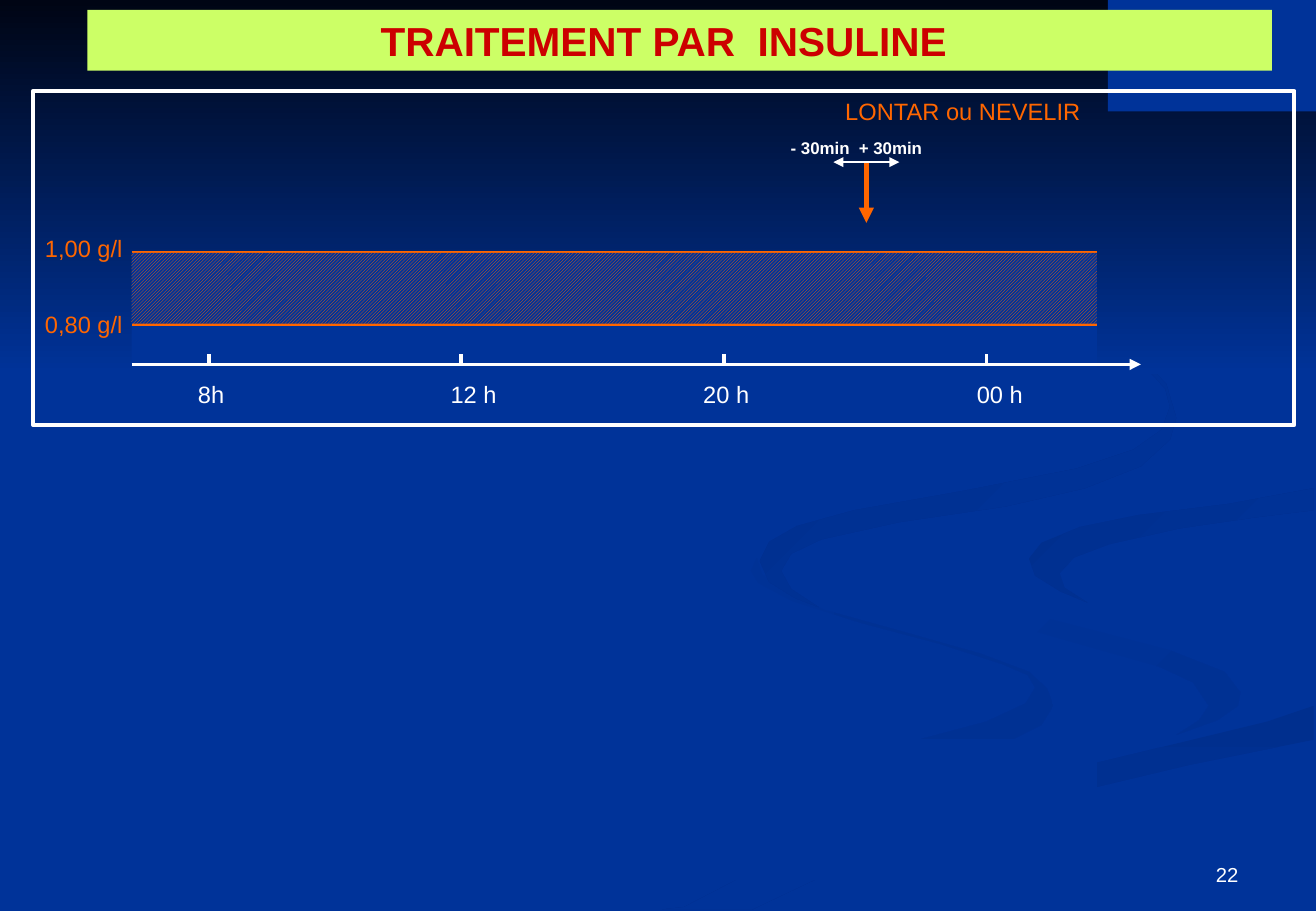
from lxml.etree import SubElement
from pptx import Presentation
from pptx.dml.color import RGBColor
from pptx.enum.dml import MSO_PATTERN
from pptx.enum.shapes import MSO_CONNECTOR, MSO_SHAPE
from pptx.enum.text import MSO_ANCHOR, PP_ALIGN
from pptx.oxml.ns import qn
from pptx.util import Cm, Pt

BLUE = RGBColor(0x00, 0x33, 0x99)
RIBBON_BLUE = RGBColor(0x00, 0x2F, 0x8E)
PALE_RIBBON_BLUE = RGBColor(0x00, 0x31, 0x93)
NIGHT = RGBColor(0x00, 0x05, 0x14)
LIME = RGBColor(0xCC, 0xFF, 0x66)
RED = RGBColor(0xCC, 0x00, 0x00)
ORANGE = RGBColor(0xFF, 0x66, 0x00)
WHITE = RGBColor(0xFF, 0xFF, 0xFF)

SLIDE_WIDTH, SLIDE_HEIGHT = 27.51, 19.05
CHART_LEFT, CHART_WIDTH = 2.75, 20.18
CHART_RIGHT = CHART_LEFT + CHART_WIDTH
TARGET_TOP, TARGET_BOTTOM = 5.29, 6.77
AXIS_Y, TICK_HEIGHT = 7.62, 0.21
DOSE_X, DOSE_Y = 18.11, 3.39

# Hour, tick position, left of its label
HOURS = (
    ("8h", 4.37, 3.89),
    ("12 h", 9.63, 9.17),
    ("20 h", 15.14, 14.45),
    ("00 h", 20.62, 20.17),
)

# First colour, last colour, clockwise angle, outline in centimetres
RIBBONS = (
    (BLUE, PALE_RIBBON_BLUE, 0, (
        (21.51, 14.05), (20.5, 13.67), (18.77, 13.18), (17.22, 12.75), (16.33, 12.32),
        (15.93, 12.01), (15.82, 11.66), (15.7, 11.94), (15.85, 12.19), (16.56, 12.57),
        (18.01, 13.03), (19.63, 13.46), (20.96, 13.89), (21.49, 14.12), (21.64, 14.38),
        (21.44, 14.71), (20.62, 15.09), (18.82, 15.57), (15.93, 16.23), (12.62, 17.12),
        (10.36, 17.96), (8.26, 19.02), (9.93, 19.02), (12.83, 17.78), (16.33, 16.66),
        (19.25, 15.95), (21.16, 15.47), (21.77, 15.16), (22.02, 14.76), (21.89, 14.4))),
    (BLUE, PALE_RIBBON_BLUE, 45, (
        (25.93, 14.48), (25.6, 14.05), (24.43, 13.59), (22.86, 13.18), (21.29, 12.78),
        (20.17, 12.27), (19.91, 11.79), (19.99, 12.17), (20.52, 12.7), (21.49, 13.16),
        (23.06, 13.61), (24.23, 13.94), (24.94, 14.27), (25.27, 14.76), (25.07, 15.06),
        (24.59, 15.37), (25.45, 15.06), (25.88, 14.76))),
    (RIBBON_BLUE, BLUE, 90, (
        (14.3, 18.97), (13.84, 19.02), (15.72, 19.02), (17.32, 18.26), (19.86, 17.32),
        (22.58, 16.54), (24.84, 16), (27.46, 15.47), (27.46, 14.76), (26.49, 15.09),
        (24.84, 15.49), (21.44, 16.31), (18.21, 17.3), (15.67, 18.26))),
    (RIBBON_BLUE, BLUE, 45, (
        (21.51, 11.68), (21.64, 12.04), (22.17, 12.37), (22.73, 12.6), (22.25, 12.29),
        (22.15, 11.99), (22.45, 11.66), (23.19, 11.38), (24.66, 11.05), (26.24, 10.82),
        (27.46, 10.67), (27.46, 10.21), (25.68, 10.54), (23.8, 10.77), (22.58, 11.02),
        (21.77, 11.35))),
    (RIBBON_BLUE, BLUE, 45, (
        (18.8, 10.92), (21.03, 10.59), (22.68, 10.21), (23.85, 9.75), (24.46, 9.19),
        (24.59, 8.74), (24.38, 8.03), (23.77, 7.39), (22.58, 6.63), (20.98, 5.92),
        (22.73, 6.76), (23.72, 7.42), (24.36, 8.13), (24.46, 8.51), (24.28, 8.99),
        (23.7, 9.4), (22.5, 9.8), (20.17, 10.26), (17.86, 10.67), (16.66, 11),
        (16.08, 11.33), (15.88, 11.73), (16.08, 12.17), (16.61, 12.5), (17.12, 12.7),
        (16.54, 12.32), (16.33, 11.94), (16.54, 11.58), (17.17, 11.28))),
)


def fill_gradient(shape, first, last, angle):
    """Blend two colours along an angle measured clockwise."""
    shape.fill.gradient()
    shape.fill.gradient_angle = -angle % 360
    for stop, color in zip(shape.fill.gradient_stops, (first, last)):
        stop.color.rgb = color


def add_ribbon(slide, first, last, angle, outline):
    start, *others = [(Cm(x), Cm(y)) for x, y in outline]
    builder = slide.shapes.build_freeform(*start)
    builder.add_line_segments(others, close=True)
    ribbon = builder.convert_to_shape()
    ribbon.shadow.inherit = False
    ribbon.line.fill.background()
    fill_gradient(ribbon, first, last, angle)


def add_panel(slide, left, top, width, height, color=None):
    """Add a borderless rectangle, unfilled when no colour is given."""
    panel = slide.shapes.add_shape(
        MSO_SHAPE.RECTANGLE, Cm(left), Cm(top), Cm(width), Cm(height))
    panel.shadow.inherit = False
    panel.line.fill.background()
    if color is None:
        panel.fill.background()
    else:
        panel.fill.solid()
        panel.fill.fore_color.rgb = color
    return panel


def write(frame, text, size, color, bold=False, align=PP_ALIGN.LEFT):
    frame.word_wrap = True
    paragraph = frame.paragraphs[0]
    paragraph.alignment = align
    run = paragraph.add_run()
    run.text = text
    run.font.name = "Arial"
    run.font.size = Pt(size)
    run.font.bold = bold
    run.font.color.rgb = color


def add_label(slide, text, left, top, width, color, size=14, bold=False):
    label = slide.shapes.add_textbox(Cm(left), Cm(top), Cm(width), Cm(0.85))
    write(label.text_frame, text, size, color, bold)


def add_line(slide, x1, y1, x2, y2, color, weight, arrows=()):
    """Add a line; arrows lists the ends, headEnd or tailEnd, that get a triangle."""
    line = slide.shapes.add_connector(
        MSO_CONNECTOR.STRAIGHT, Cm(x1), Cm(y1), Cm(x2), Cm(y2))
    line.line.color.rgb = color
    line.line.width = Pt(weight)
    outline = line.line._get_or_add_ln()
    for end in arrows:
        SubElement(outline, qn(f"a:{end}"), type="triangle")
    SubElement(line._element.spPr, qn("a:effectLst"))


def add_backdrop(slide):
    slide.background.fill.solid()
    slide.background.fill.fore_color.rgb = BLUE
    for ribbon in RIBBONS:
        add_ribbon(slide, *ribbon)
    sky = add_panel(slide, 0, 0, SLIDE_WIDTH, 7.82)
    fill_gradient(sky, NIGHT, BLUE, 90)
    add_panel(slide, 23.16, 0, 4.35, 2.33, BLUE)


def add_title(slide):
    banner = add_panel(slide, 1.83, 0.21, 24.76, 1.27, LIME)
    banner.text_frame.margin_right = Cm(0.92)
    write(banner.text_frame, "TRAITEMENT PAR  INSULINE", 24, RED, True, PP_ALIGN.CENTER)


def add_page_number(slide):
    number = slide.shapes.add_textbox(Cm(19.71), Cm(17.35), Cm(6.43), Cm(1.32))
    number.text_frame.vertical_anchor = MSO_ANCHOR.BOTTOM
    write(number.text_frame, "22", 12, WHITE, align=PP_ALIGN.RIGHT)


def add_target_range(slide):
    limits = (("1,00 g/l", TARGET_TOP, 2.25), ("0,80 g/l", TARGET_BOTTOM, 3))
    for level, y, weight in limits:
        add_line(slide, CHART_LEFT, y, CHART_RIGHT, y, ORANGE, weight)
        add_label(slide, level, 0.69, y - 0.53 * (1 if y == TARGET_TOP else 0.8), 2.5, ORANGE)
    band = add_panel(slide, CHART_LEFT, TARGET_TOP, CHART_WIDTH, TARGET_BOTTOM - TARGET_TOP)
    band.fill.patterned()
    band.fill.pattern = MSO_PATTERN.LIGHT_UPWARD_DIAGONAL
    band.fill.fore_color.rgb = ORANGE
    band.fill.back_color.rgb = BLUE


def add_time_axis(slide):
    add_line(slide, CHART_LEFT, AXIS_Y, 23.85, AXIS_Y, WHITE, 2.25, ["tailEnd"])
    for hour, tick, label_left in HOURS:
        add_line(slide, tick, AXIS_Y - TICK_HEIGHT, tick, AXIS_Y, WHITE, 2.25)
        add_label(slide, hour, label_left, 7.83, 2.5, WHITE)


def add_dose(slide):
    add_label(slide, "LONTAR ou NEVELIR", 17.42, 1.9, 5.97, ORANGE)
    add_line(slide, DOSE_X, DOSE_Y, DOSE_X, 4.66, ORANGE, 3, ["tailEnd"])
    add_line(slide, DOSE_X - 0.69, DOSE_Y, DOSE_X + 0.69, DOSE_Y, WHITE, 0.75,
             ["headEnd", "tailEnd"])
    add_label(slide, "- 30min  + 30min", 16.28, 2.75, 5.97, WHITE, 10, True)


def main():
    presentation = Presentation()
    presentation.slide_width = Cm(SLIDE_WIDTH)
    presentation.slide_height = Cm(SLIDE_HEIGHT)
    slide = presentation.slides.add_slide(presentation.slide_layouts[6])
    add_backdrop(slide)
    add_page_number(slide)
    add_title(slide)
    for top, height in ((6.56, 2.74), (15.45, 2.96)):
        add_panel(slide, CHART_LEFT, top, CHART_WIDTH, height, BLUE)
    add_target_range(slide)
    add_time_axis(slide)
    add_dose(slide)
    frame = add_panel(slide, 0.69, 1.9, 26.37, 6.99)
    frame.line.color.rgb = WHITE
    frame.line.width = Pt(2.25)
    presentation.save("out.pptx")


if __name__ == "__main__":
    main()
